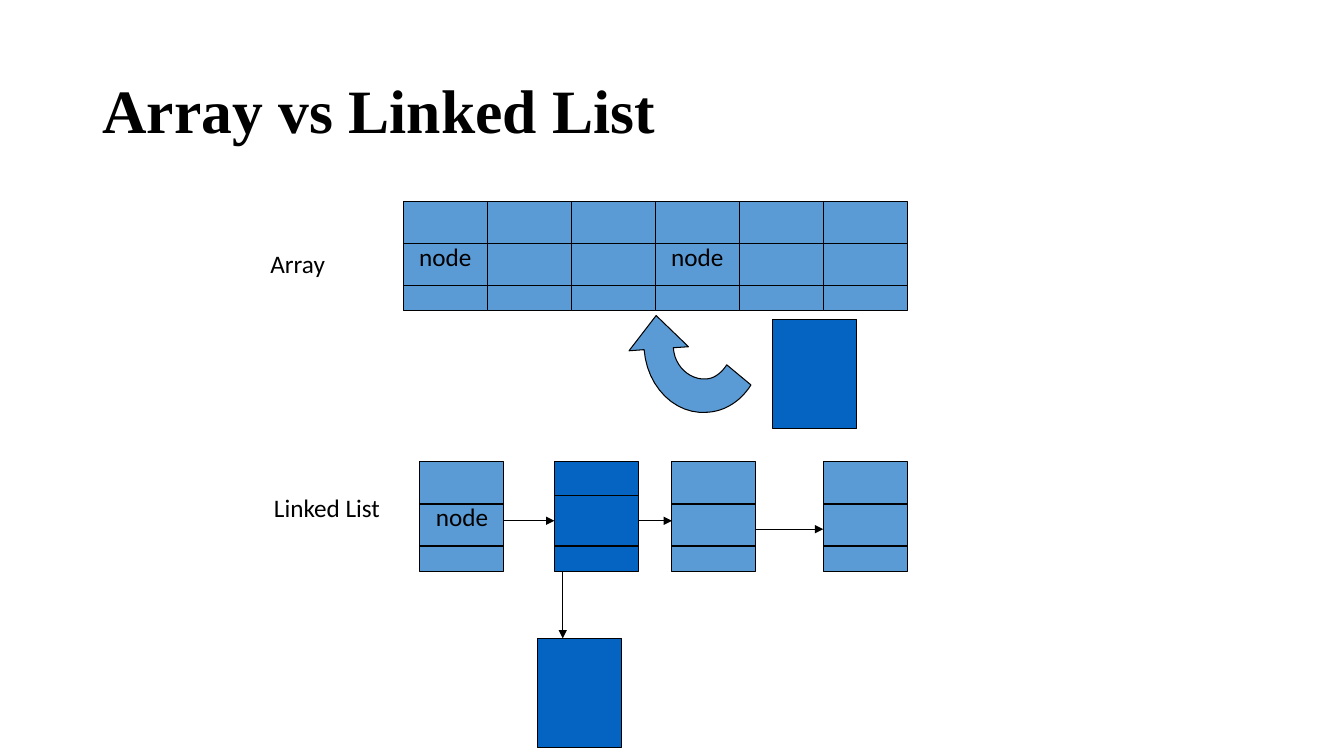
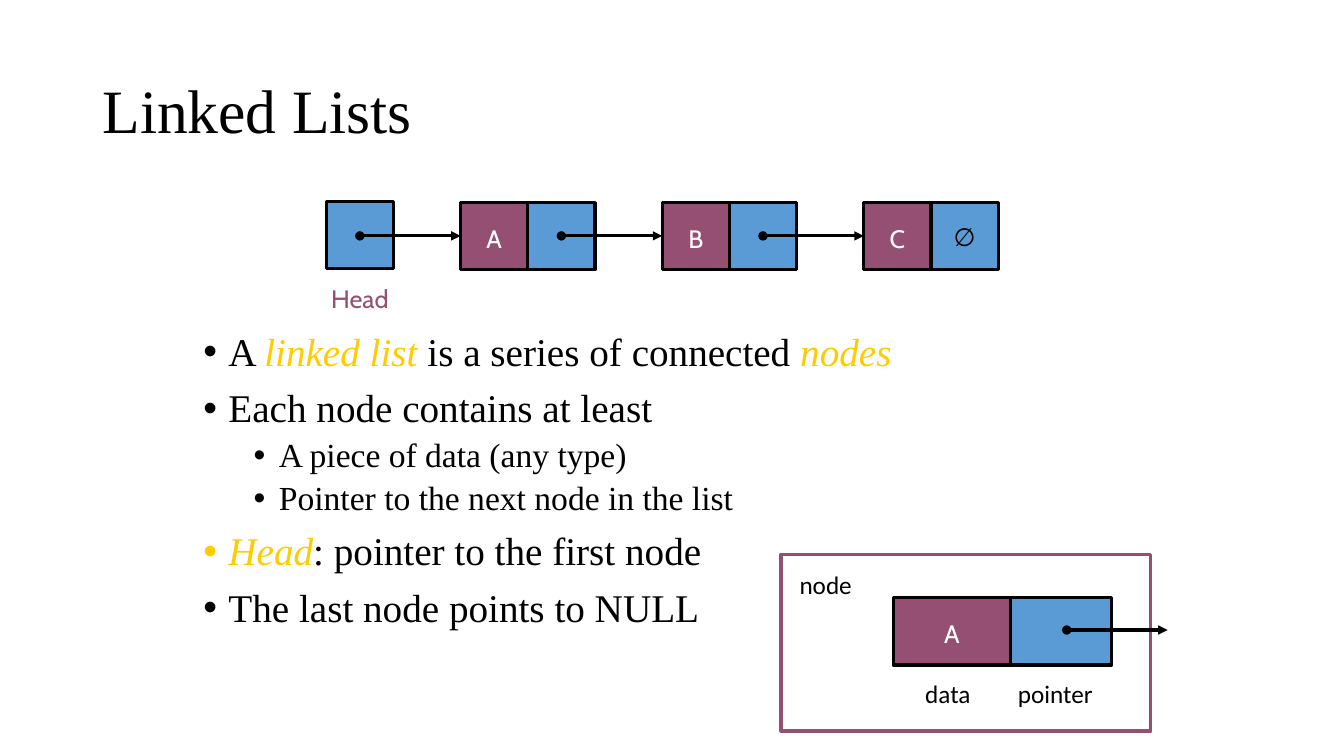
"""Build two slides comparing arrays with linked lists."""
import pptx
import pptx.util
import pptx.dml.color
import pptx.enum.shapes
import pptx.enum.text
import pptx.oxml.ns
import lxml.etree

Pt = pptx.util.Pt
ALIGN = pptx.enum.text.PP_ALIGN
MIDDLE = pptx.enum.text.MSO_ANCHOR.MIDDLE

BLACK, WHITE, YELLOW = "000000", "FFFFFF", "FFCC00"
BLUE, DARK_BLUE, PURPLE = "5B9BD5", "0563C1", "954F72"
SERIF, SANS, CABIN = "Times New Roman", "Calibri", "Cabin"
THIN, THICK = 0.75, 2.25

NODE_W, NODE_H = 60, 78
ARRAY_LEFT, ARRAY_TOP, LIST_TOP = 288, 144, 330
ARRAY_NODES = ["node", "", "", "node", "", ""]
LIST_NODES = [
    (300, BLUE, 30, "node"),
    (396, DARK_BLUE, 24, ""),
    (480, BLUE, 30, ""),
    (588, BLUE, 30, ""),
]
LIST_LINK_YS = [372, 372, 378]
NEW_NODES = [(552, 228), (384, 456)]
ROW_LABELS = [("Array", 186, 174), ("Linked List", 188.6, 348)]

INSERT_ARROW = [
    [(481, 248.4)],
    [(481.7, 261.4), (492.5, 271.4), (504, 270.7)],
    [(509.8, 270.7), (515.5, 266.4), (519.1, 260.6)],
    [(536.4, 275)],
    [(529.2, 286.6), (517.7, 293.8), (505.4, 294.5)],
    [(482.4, 296.6), (462.2, 276.5), (460.1, 249.8)],
    [(449.3, 250.6)],
    [(468.7, 225.4)],
    [(491.8, 247.7)],
]

CELL, NODE_PITCH = 48, 144
HEAD_LEFT, HEAD_TOP, CHAIN_TOP = 233, 144, 144.7
CHAIN = [("A", ""), ("B", ""), ("C", "∅")]
BULLETS = [
    (0, [("A ", False), ("linked list", True),
         (" is a series of connected ", False), ("nodes", True)]),
    (0, [("Each node contains at least", False)]),
    (1, [("A piece of data (any type)", False)]),
    (1, [("Pointer to the next node in the list", False)]),
    (0, [("Head", True), (": pointer to the first node", False)]),
    (0, [("The last node points to NULL", False)]),
]
LEVELS = [(28, 18, 10), (24, 54, 5)]
DETAIL_LABELS = [("node", 564, 403), ("data", 653.8, 481), ("pointer", 720, 481)]


def rgb(value):
    return pptx.dml.color.RGBColor.from_string(value)


def add_run(paragraph, text, size, font, color, bold=False, italic=False):
    run = paragraph.add_run()
    run.text = text
    run.font.size = Pt(size)
    run.font.name = font
    run.font.color.rgb = rgb(color)
    run.font.bold = bold
    run.font.italic = italic


def add_child(parent, tag, **attributes):
    return lxml.etree.SubElement(parent, pptx.oxml.ns.qn(tag), attributes)


def place(placeholder, left, top, width, height):
    placeholder.left, placeholder.top = Pt(left), Pt(top)
    placeholder.width, placeholder.height = Pt(width), Pt(height)
    placeholder.text_frame.auto_size = pptx.enum.text.MSO_AUTO_SIZE.NONE


def add_titled_slide(deck, layout, title, bold=False):
    slide = deck.slides.add_slide(deck.slide_layouts[layout])
    place(slide.shapes.title, 66, 28.8, 828, 104.4)
    frame = slide.shapes.title.text_frame
    frame.vertical_anchor = MIDDLE
    heading = frame.paragraphs[0]
    heading.alignment = ALIGN.LEFT
    heading.line_spacing = 0.9
    add_run(heading, title, 44, SERIF, BLACK, bold)
    return slide


def paint(shape, fill, line=BLACK, width=THIN):
    shape.shadow.inherit = False
    if fill:
        shape.fill.solid()
        shape.fill.fore_color.rgb = rgb(fill)
    else:
        shape.fill.background()
    shape.line.color.rgb = rgb(line)
    shape.line.width = Pt(width)


def add_box(slide, left, top, width, height, fill, line=BLACK, weight=THIN,
            text="", font=SANS, color=BLACK, inset_top=0):
    box = slide.shapes.add_shape(
        pptx.enum.shapes.MSO_SHAPE.RECTANGLE, Pt(left), Pt(top), Pt(width), Pt(height))
    paint(box, fill, line, weight)
    if text:
        frame = box.text_frame
        frame.margin_top, frame.margin_bottom = Pt(inset_top), 0
        frame.vertical_anchor = MIDDLE
        frame.paragraphs[0].alignment = ALIGN.CENTER
        add_run(frame.paragraphs[0], text, 18, font, color)


def add_label(slide, text, left, top, font=SANS, color=BLACK, align=ALIGN.LEFT):
    label = slide.shapes.add_textbox(Pt(left), Pt(top), Pt(96), Pt(29))
    label.text_frame.word_wrap = True
    paragraph = label.text_frame.paragraphs[0]
    paragraph.alignment = align
    add_run(paragraph, text, 18, font, color)


def add_line(slide, x1, y1, x2, y2, width=THIN, head=None, tail=None):
    line = slide.shapes.add_connector(
        pptx.enum.shapes.MSO_CONNECTOR.STRAIGHT, Pt(x1), Pt(y1), Pt(x2), Pt(y2))
    line.line.color.rgb = rgb(BLACK)
    line.line.width = Pt(width)
    properties = line._element.spPr
    outline = properties.find(pptx.oxml.ns.qn("a:ln"))
    for tag, kind in (("a:headEnd", head), ("a:tailEnd", tail)):
        if kind:
            add_child(outline, tag, type=kind)
    add_child(properties, "a:effectLst")


def add_node(slide, left, top, fill=BLUE, first_row=30, text=""):
    add_box(slide, left, top, NODE_W, NODE_H, fill, text=text)
    for offset in (first_row, 60):
        add_line(slide, left, top + offset, left + NODE_W, top + offset)


def trace(segments, steps=12):
    points = list(segments[0])
    for segment in segments[1:]:
        if len(segment) == 1:
            points += segment
            continue
        corners = [points[-1], *segment]
        for step in range(1, steps + 1):
            t = step / steps
            weights = ((1 - t) ** 3, 3 * t * (1 - t) ** 2, 3 * t * t * (1 - t), t ** 3)
            points.append(tuple(
                sum(w * corner[axis] for w, corner in zip(weights, corners))
                for axis in (0, 1)))
    return points


def add_insert_arrow(slide):
    points = [(Pt(x), Pt(y)) for x, y in trace(INSERT_ARROW)]
    builder = slide.shapes.build_freeform(*points[0])
    builder.add_line_segments(points[1:], close=True)
    paint(builder.convert_to_shape(), BLUE)


def build_comparison(deck):
    slide = add_titled_slide(deck, 5, "Array vs Linked List", bold=True)
    for index, text in enumerate(ARRAY_NODES):
        add_node(slide, ARRAY_LEFT + index * NODE_W, ARRAY_TOP, text=text)
    for left, fill, first_row, text in LIST_NODES:
        add_node(slide, left, LIST_TOP, fill, first_row, text)
    for source, target, y in zip(LIST_NODES, LIST_NODES[1:], LIST_LINK_YS):
        add_line(slide, source[0] + NODE_W, y, target[0], y, tail="triangle")
    for left, top in NEW_NODES:
        add_box(slide, left, top, NODE_W, NODE_H, DARK_BLUE)
    add_line(slide, 402, LIST_TOP + NODE_H, 402, 456, tail="triangle")
    for label in ROW_LABELS:
        add_label(slide, *label)
    add_insert_arrow(slide)


def fill_bullets(body):
    place(body, 138, 234, 618, 240)
    frame = body.text_frame
    for index, (level, parts) in enumerate(BULLETS):
        item = frame.add_paragraph() if index else frame.paragraphs[0]
        size, indent, space = LEVELS[level]
        item.level = level
        item.line_spacing = 0.9
        item.space_before = Pt(space)
        properties = item._p.get_or_add_pPr()
        properties.set("marL", str(Pt(indent)))
        properties.set("indent", str(-Pt(18)))
        add_child(properties, "a:buFont", typeface="Arial")
        add_child(properties, "a:buChar", char="•")
        for text, term in parts:
            add_run(item, text, size, SERIF, YELLOW if term else BLACK, italic=term)


def add_linked_cells(slide, left, top, data, pointer="", data_w=CELL, pointer_w=CELL):
    add_box(slide, left + data_w, top, pointer_w, CELL, BLUE, weight=THICK,
            text=pointer, font=CABIN)
    add_box(slide, left, top, data_w, CELL, PURPLE, weight=THICK,
            text=data, font=CABIN, color=WHITE, inset_top=3)


def add_pointer(slide, left, y):
    add_line(slide, left, y, left + 72, y, THICK, "oval", "triangle")


def build_definition(deck):
    slide = add_titled_slide(deck, 1, "Linked Lists")
    fill_bullets(slide.placeholders[1])
    add_box(slide, HEAD_LEFT, HEAD_TOP, CELL, CELL, BLUE, weight=THICK)
    add_label(slide, "Head", HEAD_LEFT + CELL / 2 - 48, 198.7, CABIN, PURPLE, ALIGN.CENTER)
    for index, (data, pointer) in enumerate(CHAIN):
        add_linked_cells(slide, HEAD_LEFT + 96 + index * NODE_PITCH, CHAIN_TOP, data, pointer)
    for index in range(len(CHAIN)):
        add_pointer(slide, HEAD_LEFT + CELL / 2 + index * NODE_PITCH, 168.5)

    add_box(slide, 558, 396, 264, 126, None, PURPLE, 2.5)
    add_linked_cells(slide, 638, 427, "A", data_w=84, pointer_w=72)
    for label in DETAIL_LABELS:
        add_label(slide, *label)
    add_pointer(slide, 762, 450)


def main():
    deck = pptx.Presentation()
    deck.slide_width, deck.slide_height = Pt(960), Pt(540)
    build_comparison(deck)
    build_definition(deck)
    deck.save("out.pptx")


if __name__ == "__main__":
    main()
